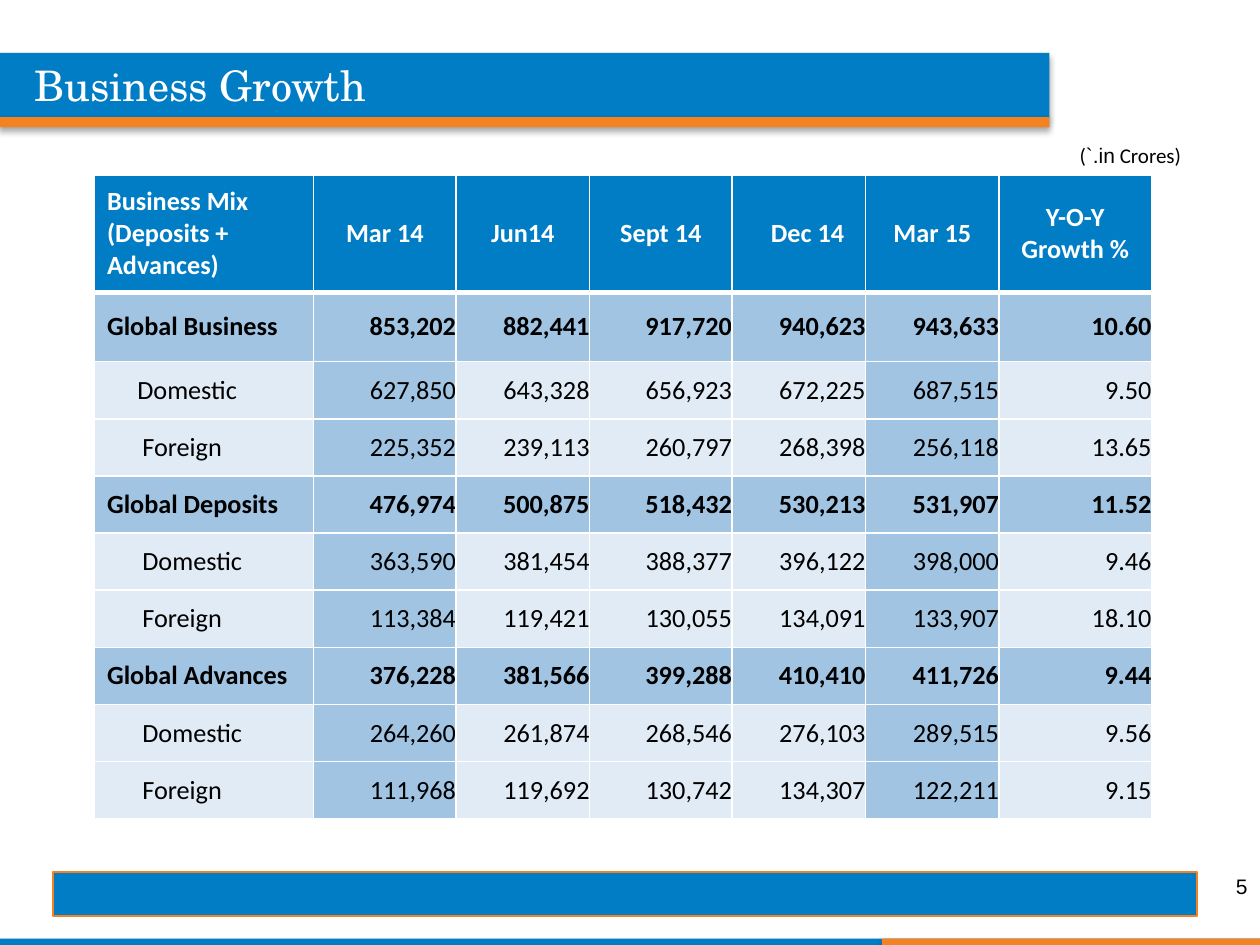
from lxml.etree import SubElement
from pptx import Presentation
from pptx.dml.color import RGBColor
from pptx.enum.shapes import MSO_SHAPE
from pptx.enum.text import MSO_ANCHOR, MSO_AUTO_SIZE, PP_ALIGN
from pptx.oxml.ns import qn
from pptx.util import Inches, Pt

BLUE = RGBColor(0x00, 0x7D, 0xC5)
ORANGE = RGBColor(0xF5, 0x82, 0x20)
MID_BLUE = RGBColor(0xA1, 0xC4, 0xE3)
PALE_BLUE = RGBColor(0xE0, 0xEB, 0xF6)
WHITE = RGBColor(0xFF, 0xFF, 0xFF)
BLACK = RGBColor(0x00, 0x00, 0x00)

HEADERS = [
    ["Business Mix", "(Deposits + Advances)"],
    ["Mar 14"], ["Jun14"], ["Sept 14"], ["Dec 14"], ["Mar 15"],
    ["Y-O-Y", "Growth %"],
]
ROWS = [
    ("Global Business", "853,202", "882,441", "917,720", "940,623", "943,633", "10.60"),
    ("Domestic", "627,850", "643,328", "656,923", "672,225", "687,515", "9.50"),
    ("Foreign", "225,352", "239,113", "260,797", "268,398", "256,118", "13.65"),
    ("Global Deposits", "476,974", "500,875", "518,432", "530,213", "531,907", "11.52"),
    ("Domestic", "363,590", "381,454", "388,377", "396,122", "398,000", "9.46"),
    ("Foreign", "113,384", "119,421", "130,055", "134,091", "133,907", "18.10"),
    ("Global Advances", "376,228", "381,566", "399,288", "410,410", "411,726", "9.44"),
    ("Domestic", "264,260", "261,874", "268,546", "276,103", "289,515", "9.56"),
    ("Foreign", "111,968", "119,692", "130,742", "134,307", "122,211", "9.15"),
]
COLUMN_WIDTHS = [1.74, 1.13, 1.06, 1.13, 1.06, 1.06, 1.21]
TABLE_HEIGHT, HEADER_HEIGHT, FIRST_ROW_HEIGHT = 5.11, 0.93, 0.55
MARCH_COLUMNS = (1, 5)
DECEMBER_COLUMN = 4


class SlideBuilder:
    body_font = "Calibri"
    plain_font = "Arial"
    title_font = "TeX Gyre Schola"

    def __init__(self, presentation):
        self.slide = presentation.slides.add_slide(presentation.slide_layouts[5])

    def add_run(self, paragraph, text, size, color=BLACK, bold=False, font=body_font):
        run = paragraph.add_run()
        run.text = text
        run.font.name = font
        run.font.size = Pt(size)
        run.font.bold = bold
        run.font.color.rgb = color

    def bar(self, left, top, width, height, color, line=None, shadow=True):
        shape = self.slide.shapes.add_shape(
            MSO_SHAPE.RECTANGLE, Inches(left), Inches(top), Inches(width), Inches(height))
        shape.fill.solid()
        shape.fill.fore_color.rgb = color
        if line is None:
            shape.line.fill.background()
        else:
            shape.line.color.rgb = line
            shape.line.width = Pt(0.75)
        shape.shadow.inherit = False
        if shadow:
            effects = shape.element.spPr.find(qn("a:effectLst"))
            outer = SubElement(effects, qn("a:outerShdw"), blurRad=str(Pt(3.5)),
                               dist=str(Pt(2.2)), dir="5400000", rotWithShape="0")
            shade = SubElement(outer, qn("a:srgbClr"), val=str(BLACK))
            SubElement(shade, qn("a:alpha"), val="32000")

    def title(self, text, left, top, width, height):
        title = self.slide.shapes.title
        title.left, title.top = Inches(left), Inches(top)
        title.width, title.height = Inches(width), Inches(height)
        frame = title.text_frame
        frame.auto_size = MSO_AUTO_SIZE.NONE
        frame.vertical_anchor = MSO_ANCHOR.TOP
        paragraph = frame.paragraphs[0]
        paragraph.alignment = PP_ALIGN.LEFT
        self.add_run(paragraph, text, 24, WHITE, font=self.title_font)
        # Bring the title in front of its bar
        title.element.getparent().append(title.element)

    def text(self, runs, left, top, width, height, align=PP_ALIGN.LEFT, anchor=MSO_ANCHOR.TOP):
        box = self.slide.shapes.add_textbox(
            Inches(left), Inches(top), Inches(width), Inches(height))
        frame = box.text_frame
        frame.word_wrap = True
        frame.vertical_anchor = anchor
        paragraph = frame.paragraphs[0]
        paragraph.alignment = align
        for text, font in runs:
            self.add_run(paragraph, text, 12, font=font)

    def cell_borders(self, cell, top, bottom):
        properties = cell._tc.get_or_add_tcPr()
        for side, width in (("L", 1), ("R", 1), ("T", top), ("B", bottom)):
            line = SubElement(properties, qn(f"a:ln{side}"), w=str(Pt(width)))
            fill = SubElement(line, qn("a:solidFill"))
            SubElement(fill, qn("a:srgbClr"), val=str(WHITE))

    def cell(self, cell, lines, fill, color, bold, align, margins, top=1, bottom=1):
        self.cell_borders(cell, top, bottom)
        cell.fill.solid()
        cell.fill.fore_color.rgb = fill
        cell.vertical_anchor = MSO_ANCHOR.MIDDLE
        (cell.margin_left, cell.margin_top,
         cell.margin_right, cell.margin_bottom) = map(Inches, margins)
        frame = cell.text_frame
        for index, line in enumerate(lines):
            paragraph = frame.add_paragraph() if index else frame.paragraphs[0]
            paragraph.alignment = align
            self.add_run(paragraph, line, 15, color, bold)

    def growth_table(self, left, top):
        table = self.slide.shapes.add_table(
            len(ROWS) + 1, len(HEADERS), Inches(left), Inches(top),
            Inches(sum(COLUMN_WIDTHS)), Inches(TABLE_HEIGHT)).table
        table.first_row = table.horz_banding = False
        for column, width in zip(table.columns, COLUMN_WIDTHS):
            column.width = Inches(width)
        other_height = (TABLE_HEIGHT - HEADER_HEIGHT - FIRST_ROW_HEIGHT) / (len(ROWS) - 1)
        heights = [HEADER_HEIGHT, FIRST_ROW_HEIGHT] + [other_height] * (len(ROWS) - 1)
        for row, height in zip(table.rows, heights):
            row.height = Inches(height)

        # Header row
        for column, lines in enumerate(HEADERS):
            align = PP_ALIGN.CENTER if column else PP_ALIGN.LEFT
            indent = 0.24 if column == DECEMBER_COLUMN else 0.1
            self.cell(table.cell(0, column), lines, BLUE, WHITE, True, align,
                      (indent, 0.05, 0.1, 0.05), bottom=3)

        # Totals are bold and darker, their parts are indented
        for row, values in enumerate(ROWS, 1):
            total = values[0].startswith("Global")
            for column, value in enumerate(values):
                dark = total or column in MARCH_COLUMNS
                if column:
                    align, margins = PP_ALIGN.RIGHT, (0, 0, 0, 0)
                else:
                    indent = 0.1 if total else 0.34 if row == 2 else 0.38
                    align, margins = PP_ALIGN.LEFT, (indent, 0.05, 0.1, 0.05)
                self.cell(table.cell(row, column), [value], MID_BLUE if dark else PALE_BLUE,
                          BLACK, total, align, margins, top=3 if row == 1 else 1)


def main():
    presentation = Presentation()
    presentation.slide_width = Inches(10)
    presentation.slide_height = Inches(7.5)
    builder = SlideBuilder(presentation)

    # Bottom edge, title band and footer bar
    builder.bar(0, 7.45, 10, 0.05, BLUE)
    builder.bar(7, 7.45, 3, 0.05, ORANGE)
    builder.bar(0, 0.42, 8.33, 0.52, BLUE)
    builder.bar(0, 0.93, 8.33, 0.08, ORANGE)
    builder.bar(0.42, 6.92, 9.08, 0.35, BLUE, line=ORANGE, shadow=False)

    # Business figures
    builder.growth_table(0.75, 1.39)

    # Title, unit and page number
    builder.title("Business Growth", 0.17, 0.42, 6.75, 0.5)
    builder.text([("(", builder.body_font), ("`.in", builder.plain_font),
                  (" Crores)", builder.body_font)], 8.47, 1.08, 1.33, 0.3)
    builder.text([("5", builder.plain_font)], 7.67, 6.83, 2.33, 0.4,
                 PP_ALIGN.RIGHT, MSO_ANCHOR.MIDDLE)

    presentation.save("out.pptx")


if __name__ == "__main__":
    main()
